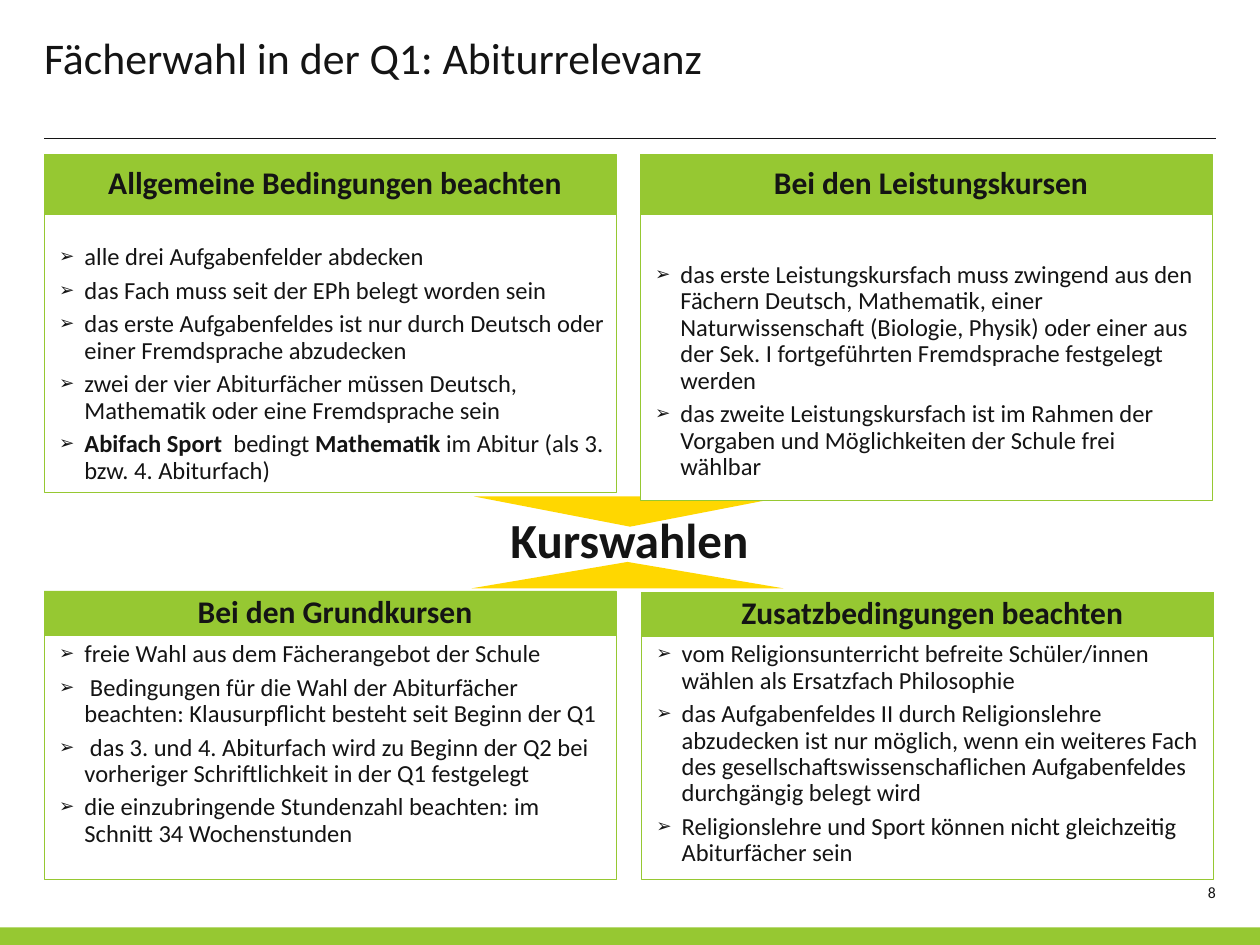
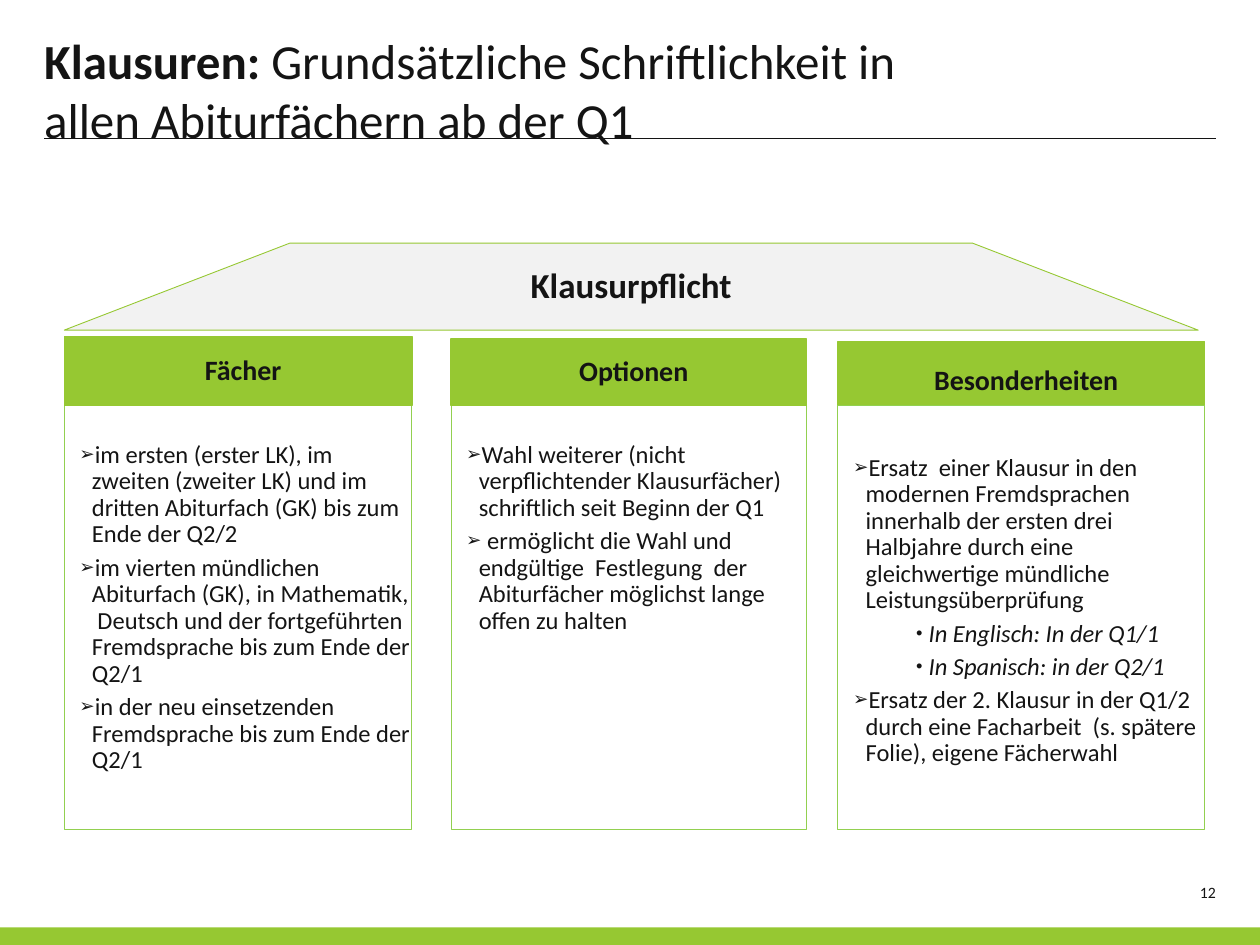
"""Build two slides on course choice and written exams."""
from dataclasses import dataclass
from typing import Any, NamedTuple

from lxml.etree import SubElement
from pptx import Presentation
from pptx.dml.color import RGBColor
from pptx.enum.shapes import MSO_CONNECTOR, MSO_SHAPE
from pptx.enum.text import MSO_ANCHOR, MSO_AUTO_SIZE, PP_ALIGN
from pptx.oxml.ns import qn
from pptx.util import Inches, Pt


@dataclass(frozen=True)
class Theme:
    """Colours, font and type sizes."""
    font: str = "Calibri"
    ink: RGBColor = RGBColor(0x14, 0x14, 0x14)
    green: RGBColor = RGBColor(0x96, 0xC8, 0x32)
    leaf: RGBColor = RGBColor(0x92, 0xD0, 0x50)
    gold: RGBColor = RGBColor(0xFF, 0xD7, 0x00)
    mist: RGBColor = RGBColor(0xF2, 0xF2, 0xF2)
    white: RGBColor = RGBColor(0xFF, 0xFF, 0xFF)
    note: int = 9
    body: int = 14
    label: int = 16
    head: int = 18
    roof: int = 20
    title: int = 25
    large: int = 28


THEME = Theme()


class Box(NamedTuple):
    """Left, top, width and height in inches."""
    left: float
    top: float
    width: float
    height: float


class Item(NamedTuple):
    """One paragraph; stars enclose bold words."""
    text: str
    mark: str = ""
    left: float = 0
    hang: float = 0
    level: int = 0
    slant: bool = False


@dataclass(frozen=True)
class Card:
    """A list panel with its heading."""
    head: str
    bar: Box
    panel: Box
    items: list[Item]
    under: bool = False


@dataclass(frozen=True)
class Style:
    """How the cards of one slide look."""
    size: int
    gap: int
    rim: float
    edge: RGBColor
    inset: tuple[float, float, float, float]


def wide(text: str) -> Item:
    """Make an arrow item with a wide indent."""
    return Item(text, "➢", 0.2, 0.2, 1)


def tight(text: str) -> Item:
    """Make an arrow item with a tight indent."""
    return Item(text, "➢", 0.1, 0.1)


def sub(text: str) -> Item:
    """Make a slanted item of the second level."""
    return Item(text, "•", 0.6, 0.1, 1, True)


def place(shape: Any, box: Box) -> None:
    """Move and size a shape."""
    shape.left, shape.top, shape.width, shape.height = map(Inches, box)


def paint(shape: Any, fill: RGBColor, edge: RGBColor | None = None,
          rim: float = 0.5) -> None:
    """Set fill and outline and drop the shadow."""
    shape.shadow.inherit = False
    shape.fill.solid()
    shape.fill.fore_color.rgb = fill
    if edge is None:
        shape.line.fill.background()
    else:
        shape.line.color.rgb = edge
        shape.line.width = Pt(rim)


def bullet(para: Any, item: Item) -> None:
    """Give a paragraph its indent and mark."""
    props = para._p.get_or_add_pPr()
    props.set("marL", str(Inches(item.left)))
    props.set("indent", str(-Inches(item.hang)))
    if item.mark:
        tint = SubElement(props, qn("a:buClr"))
        SubElement(tint, qn("a:srgbClr"), val=str(THEME.ink))
        SubElement(props, qn("a:buSzPct"), val="75000")
        SubElement(props, qn("a:buChar"), char=item.mark)
    else:
        SubElement(props, qn("a:buNone"))


def write(shape: Any, *items: Item, size: int, bold: bool = False,
          align: PP_ALIGN = PP_ALIGN.LEFT, anchor: MSO_ANCHOR = MSO_ANCHOR.TOP,
          inset: tuple[float, float, float, float] = (0, 0, 0, 0),
          lead: float = 1.0, gap: int = 0, wrap: bool = True) -> None:
    """Fill a shape with formatted paragraphs."""
    frame = shape.text_frame
    frame.auto_size = MSO_AUTO_SIZE.NONE
    frame.word_wrap = wrap
    frame.vertical_anchor = anchor
    (frame.margin_left, frame.margin_top,
     frame.margin_right, frame.margin_bottom) = map(Inches, inset)
    for spot, item in enumerate(items):
        para = frame.add_paragraph() if spot else frame.paragraphs[0]
        para.level = item.level
        para.alignment = align
        para.line_spacing = lead
        para.space_before = Pt(gap if spot else 0)
        para.space_after = Pt(0)
        bullet(para, item)
        for turn, part in enumerate(item.text.split("*")):
            if part:
                run = para.add_run()
                run.text = part
                font = run.font
                font.name, font.size = THEME.font, Pt(size)
                font.color.rgb = THEME.ink
                font.bold = bold or turn % 2 == 1
                font.italic = item.slant


def shape(slide: Any, kind: MSO_SHAPE, box: Box, fill: RGBColor,
          edge: RGBColor | None = None, rim: float = 0.5) -> Any:
    """Draw a filled preset shape."""
    made = slide.shapes.add_shape(kind, *map(Inches, box))
    paint(made, fill, edge, rim)
    return made


def frame(slide: Any) -> None:
    """Put the shared rule and band on the layout."""
    rule = slide.shapes.add_connector(
        MSO_CONNECTOR.STRAIGHT, *map(Inches, (0.35, 1.1, 9.65, 1.1)))
    rule.line.color.rgb = THEME.ink
    rule.line.width = Pt(0.75)
    SubElement(rule.element.spPr, qn("a:effectLst"))
    band = shape(slide, MSO_SHAPE.RECTANGLE, Box(0, 7.36, 10, 0.14), THEME.green)
    for key, part in enumerate((rule, band), 90):
        part.element[0][0].set("id", str(key))
        slide.slide_layout.shapes.element.append(part.element)


def label(slide: Any, text: str, box: Box, **form: Any) -> None:
    """Add a text box."""
    note = slide.shapes.add_textbox(*map(Inches, box))
    write(note, Item(text), **form)


def start(deck: Any, title: str, size: int, page: str) -> Any:
    """Add a slide with its title and page number."""
    slide = deck.slides.add_slide(deck.slide_layouts[4])
    place(slide.shapes.title, Box(0.35, 0.24, 7.44, 0.87))
    write(slide.shapes.title, Item(title), size=size)
    label(slide, page, Box(9.37, 7.01, 0.28, 0.2), size=THEME.note,
          align=PP_ALIGN.RIGHT)
    return slide


def deal(slide: Any, cards: list[Card], style: Style) -> None:
    """Draw cards in the body holders and drop spare ones."""
    tree = slide.shapes.element
    bodies = [body for body in slide.placeholders if body.placeholder_format.idx]
    for body, card in zip(bodies, cards):
        bar = shape(slide, MSO_SHAPE.RECTANGLE, card.bar, THEME.green,
                    THEME.green, style.rim)
        write(bar, Item(card.head), size=style.size, bold=True, lead=0.9,
              align=PP_ALIGN.CENTER, anchor=MSO_ANCHOR.MIDDLE,
              inset=(0.12, 0.08, 0.04, 0.08))
        place(body, card.panel)
        paint(body, THEME.white, style.edge)
        write(body, *card.items, size=THEME.body, lead=0.9, gap=style.gap,
              inset=style.inset)
        tree.append(body.element)
        if not card.under:
            tree.append(bar.element)
    for body in bodies[len(cards):]:
        tree.remove(body.element)


def choice(deck: Any) -> None:
    """Build the slide on choosing subjects."""
    slide = start(deck, "Fächerwahl in der Q1: Abiturrelevanz", THEME.title, "8")
    frame(slide)
    kind = MSO_SHAPE.ISOSCELES_TRIANGLE
    shape(slide, kind, Box(3.74, 4.46, 2.48, 0.21), THEME.gold)
    down = shape(slide, kind, Box(3.76, 3.94, 2.48, 0.24), THEME.gold)
    down.rotation = 180
    label(slide, "Kurswahlen", Box(4.04, 4.04, 1.91, 0.47), size=THEME.large,
          bold=True, align=PP_ALIGN.CENTER, anchor=MSO_ANCHOR.MIDDLE, wrap=False)
    west, east, span = 0.35, 5.08, 4.54
    cards = [
        Card("Allgemeine Bedingungen beachten", Box(west, 1.23, span, 0.47),
             Box(west, 1.55, span, 2.36), [
                 wide("alle drei Aufgabenfelder abdecken"),
                 wide("das Fach muss seit der EPh belegt worden sein"),
                 wide("das erste Aufgabenfeldes ist nur durch Deutsch oder "
                      "einer Fremdsprache abzudecken"),
                 wide("zwei der vier Abiturfächer müssen Deutsch, Mathematik "
                      "oder eine Fremdsprache sein"),
                 wide("*Abifach Sport  *bedingt *Mathematik* im Abitur "
                      "(als 3. bzw. 4. Abiturfach)")]),
        Card("Bei den Grundkursen", Box(west, 4.69, span, 0.35),
             Box(west, 4.7, span, 2.28), [
                 wide("freie Wahl aus dem Fächerangebot der Schule"),
                 wide(" Bedingungen für die Wahl der Abiturfächer beachten: "
                      "Klausurpflicht besteht seit Beginn der Q1"),
                 wide(" das 3. und 4. Abiturfach wird zu Beginn der Q2 bei "
                      "vorheriger Schriftlichkeit in der Q1 festgelegt"),
                 wide("die einzubringende Stundenzahl beachten: im Schnitt "
                      "34 Wochenstunden")]),
        Card("Bei den Leistungskursen", Box(east, 1.23, span, 0.47),
             Box(east, 1.69, span, 2.28), [
                 wide("das erste Leistungskursfach muss zwingend aus den Fächern "
                      "Deutsch, Mathematik, einer Naturwissenschaft (Biologie, "
                      "Physik) oder einer aus der Sek. I fortgeführten "
                      "Fremdsprache festgelegt werden"),
                 wide("das zweite Leistungskursfach ist im Rahmen der Vorgaben "
                      "und Möglichkeiten der Schule frei wählbar")]),
        Card("Zusatzbedingungen beachten", Box(5.09, 4.7, span, 0.35),
             Box(5.09, 4.7, span, 2.28), [
                 wide("vom Religionsunterricht befreite Schüler/innen wählen "
                      "als Ersatzfach Philosophie"),
                 wide("das Aufgabenfeldes II durch Religionslehre abzudecken ist "
                      "nur möglich, wenn ein weiteres Fach des "
                      "gesellschaftswissenschaflichen Aufgabenfeldes durchgängig "
                      "belegt wird"),
                 wide("Religionslehre und Sport können nicht gleichzeitig "
                      "Abiturfächer sein")])]
    deal(slide, cards, Style(THEME.head, 4, 0.5, THEME.green,
                             (0.12, 0.39, 0.08, 0.05)))


def exams(deck: Any) -> None:
    """Build the slide on written exams."""
    slide = start(deck, "*Klausuren: *Grundsätzliche Schriftlichkeit in allen "
                  "Abiturfächern ab der Q1", THEME.large, "12")
    first, *rest = [(Inches(x), Inches(y)) for x, y in
                    ((0.51, 2.62), (2.3, 1.93), (7.72, 1.93), (9.51, 2.62))]
    path = slide.shapes.build_freeform(*first)
    path.add_line_segments(rest, close=True)
    roof = path.convert_to_shape()
    paint(roof, THEME.mist, THEME.green)
    write(roof, Item("Klausurpflicht"), size=THEME.roof, bold=True, lead=0.9,
          align=PP_ALIGN.CENTER, anchor=MSO_ANCHOR.MIDDLE, inset=(0.08,) * 4)
    cards = [
        Card("Fächer", Box(0.51, 2.67, 2.76, 0.55), Box(0.51, 3.12, 2.76, 3.46), [
            tight("im ersten (erster LK), im zweiten (zweiter LK) und im dritten "
                  "Abiturfach (GK) bis zum Ende der Q2/2"),
            tight("im vierten mündlichen Abiturfach (GK), in Mathematik,  Deutsch "
                  "und der fortgeführten Fremdsprache bis zum Ende der Q2/1"),
            tight("in der neu einsetzenden Fremdsprache bis zum Ende der Q2/1")]),
        Card("Optionen", Box(3.58, 2.69, 2.82, 0.53), Box(3.58, 3.12, 2.82, 3.46), [
            tight("Wahl weiterer (nicht verpflichtender Klausurfächer) "
                  "schriftlich seit Beginn der Q1"),
            tight(" ermöglicht die Wahl und endgültige  Festlegung  der "
                  "Abiturfächer möglichst lange offen zu halten")]),
        Card("Besonderheiten", Box(6.65, 2.71, 2.91, 0.63),
             Box(6.65, 3.22, 2.91, 3.36), [
                 tight("Ersatz  einer Klausur in den modernen Fremdsprachen "
                       "innerhalb der ersten drei Halbjahre durch eine "
                       "gleichwertige mündliche Leistungsüberprüfung"),
                 sub("In Englisch: In der Q1/1"),
                 sub("In Spanisch: in der Q2/1"),
                 tight("Ersatz der 2. Klausur in der Q1/2 durch eine Facharbeit  "
                       "(s. spätere Folie), eigene Fächerwahl")], under=True)]
    deal(slide, cards, Style(THEME.label, 4, 0.75, THEME.leaf, (0.12, 0.39, 0, 0)))


def main() -> None:
    """Build and save the deck."""
    deck = Presentation()
    deck.slide_width, deck.slide_height = Inches(10), Inches(7.5)
    choice(deck)
    exams(deck)
    deck.save("out.pptx")


if __name__ == "__main__":
    main()
